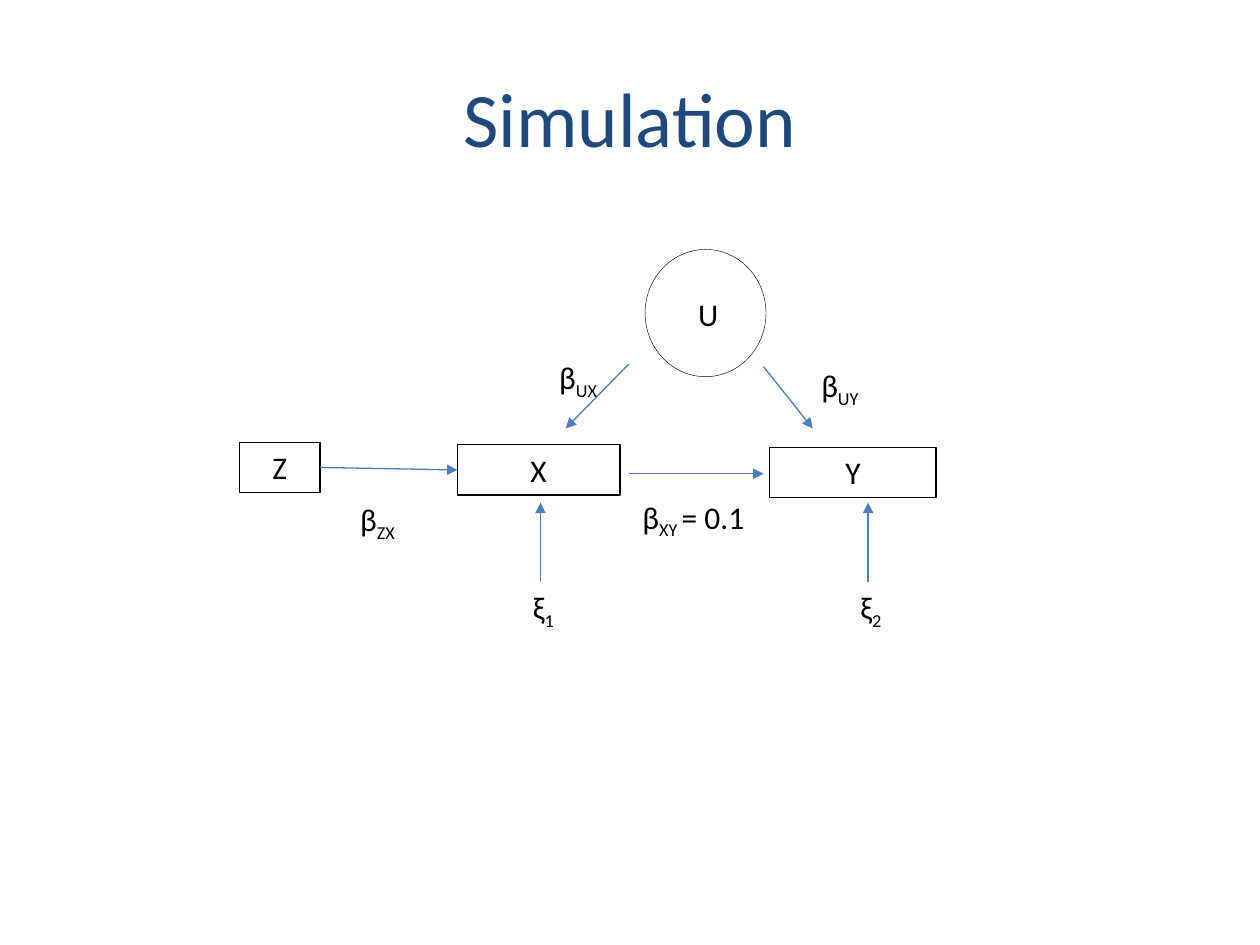
from dataclasses import dataclass

from lxml import etree
from pptx import Presentation
from pptx.dml.color import RGBColor
from pptx.enum.shapes import MSO_CONNECTOR, MSO_SHAPE
from pptx.enum.text import MSO_ANCHOR, MSO_AUTO_SIZE, PP_ALIGN
from pptx.oxml.ns import qn
from pptx.util import Inches, Pt

STRAIGHT = MSO_CONNECTOR.STRAIGHT
RECTANGLE, OVAL = MSO_SHAPE.RECTANGLE, MSO_SHAPE.OVAL
CENTER, LEFT = PP_ALIGN.CENTER, PP_ALIGN.LEFT
TOP, MIDDLE = MSO_ANCHOR.TOP, MSO_ANCHOR.MIDDLE
GROW = MSO_AUTO_SIZE.SHAPE_TO_FIT_TEXT
SITE_LEFT, SITE_RIGHT = 1, 3
TITLE_ONLY = 5


@dataclass(frozen=True)
class Theme:
    font: str = "Calibri"
    title_size: int = 44
    body_size: int = 18
    title: RGBColor = RGBColor(0x1F, 0x49, 0x7D)
    ink: RGBColor = RGBColor(0, 0, 0)
    arrow: RGBColor = RGBColor(0x4B, 0x7E, 0xBC)
    line_width: float = 0.75
    thin_width: float = 0.25


THEME = Theme()


def format_run(run, size=THEME.body_size, color=THEME.ink):
    run.font.name = THEME.font
    run.font.size = Pt(size)
    run.font.color.rgb = color


def add_title(slide, text):
    title = slide.shapes.title
    title.left, title.top = Inches(0.5), Inches(0.3)
    title.width, title.height = Inches(9), Inches(1.25)
    title.text_frame.text = text
    title.text_frame.vertical_anchor = MIDDLE
    paragraph = title.text_frame.paragraphs[0]
    paragraph.alignment = CENTER
    format_run(paragraph.runs[0], THEME.title_size, THEME.title)


def add_outline(slide, kind, left, top, width, height, line_width):
    shape = slide.shapes.add_shape(
        kind, Inches(left), Inches(top), Inches(width), Inches(height))
    shape.shadow.inherit = False
    shape.fill.background()
    shape.line.color.rgb = THEME.ink
    shape.line.width = Pt(line_width)
    return shape


def add_variable(slide, name, left, top, width):
    """Observed variable: a box with its name."""
    box = add_outline(slide, RECTANGLE, left, top, width, 0.4, THEME.line_width)
    frame = box.text_frame
    frame.text = name
    frame.auto_size = GROW
    frame.vertical_anchor = TOP
    frame.paragraphs[0].alignment = CENTER
    format_run(frame.paragraphs[0].runs[0])
    return box


def add_label(slide, left, top, width, symbol, subscript="", rest="",
              height=0.4, wrap=False, alignment=LEFT):
    """Symbol, optionally with a subscript and text after it."""
    box = slide.shapes.add_textbox(
        Inches(left), Inches(top), Inches(width), Inches(height))
    frame = box.text_frame
    frame.word_wrap = wrap
    frame.auto_size = GROW
    paragraph = frame.paragraphs[0]
    paragraph.alignment = alignment
    for text, baseline in ((symbol, 0), (subscript, -25), (rest, 0)):
        if text:
            run = paragraph.add_run()
            run.text = text
            format_run(run)
            if baseline:
                run.font._element.set("baseline", str(baseline * 1000))


def add_arrow(slide, x1, y1, x2, y2):
    arrow = slide.shapes.add_connector(
        STRAIGHT, Inches(x1), Inches(y1), Inches(x2), Inches(y2))
    arrow.line.color.rgb = THEME.arrow
    arrow.line.width = Pt(THEME.line_width)
    line = arrow.line._get_or_add_ln()
    etree.SubElement(line, qn("a:tailEnd"), type="triangle")
    etree.SubElement(arrow._element.spPr, qn("a:effectLst"))
    return arrow


def main():
    presentation = Presentation()
    presentation.slide_width, presentation.slide_height = Inches(10), Inches(7.5)
    slide = presentation.slides.add_slide(presentation.slide_layouts[TITLE_ONLY])
    add_title(slide, "Simulation")

    # Observed variables and the unobserved confounder
    box_z = add_variable(slide, "Z", 1.9, 3.51, 0.64)
    box_x = add_variable(slide, "X", 3.63, 3.53, 1.29)
    add_variable(slide, "Y", 6.11, 3.55, 1.32)
    add_outline(slide, OVAL, 5.12, 1.98, 0.96, 1.01, THEME.thin_width)
    add_label(slide, 4.8, 2.29, 1.64, "U", wrap=True, alignment=CENTER)

    # Effects between the variables
    z_to_x = add_arrow(slide, 2.55, 3.72, 3.62, 3.72)
    z_to_x.begin_connect(box_z, SITE_RIGHT)
    z_to_x.end_connect(box_x, SITE_LEFT)
    add_arrow(slide, 4.99, 3.76, 6.06, 3.76)
    add_arrow(slide, 4.99, 2.89, 4.49, 3.4)
    add_arrow(slide, 6.06, 2.91, 6.45, 3.4)

    # Effect sizes
    add_label(slide, 2.76, 3.92, 0.5, "β", "ZX", height=0.61)
    add_label(slide, 5, 3.9, 1.05, "β", "XY ", "= 0.1")
    add_label(slide, 4.34, 2.79, 0.53, "β", "UX")
    add_label(slide, 6.42, 2.86, 0.53, "β", "UY")

    # Error terms, each with an arrow up to its variable
    for number, x in (("1", 4.29), ("2", 6.89)):
        add_arrow(slide, x, 4.62, x, 3.99)
        add_label(slide, x - 0.16, 4.62, 0.38, "ξ", number)

    presentation.save("out.pptx")


if __name__ == "__main__":
    main()
